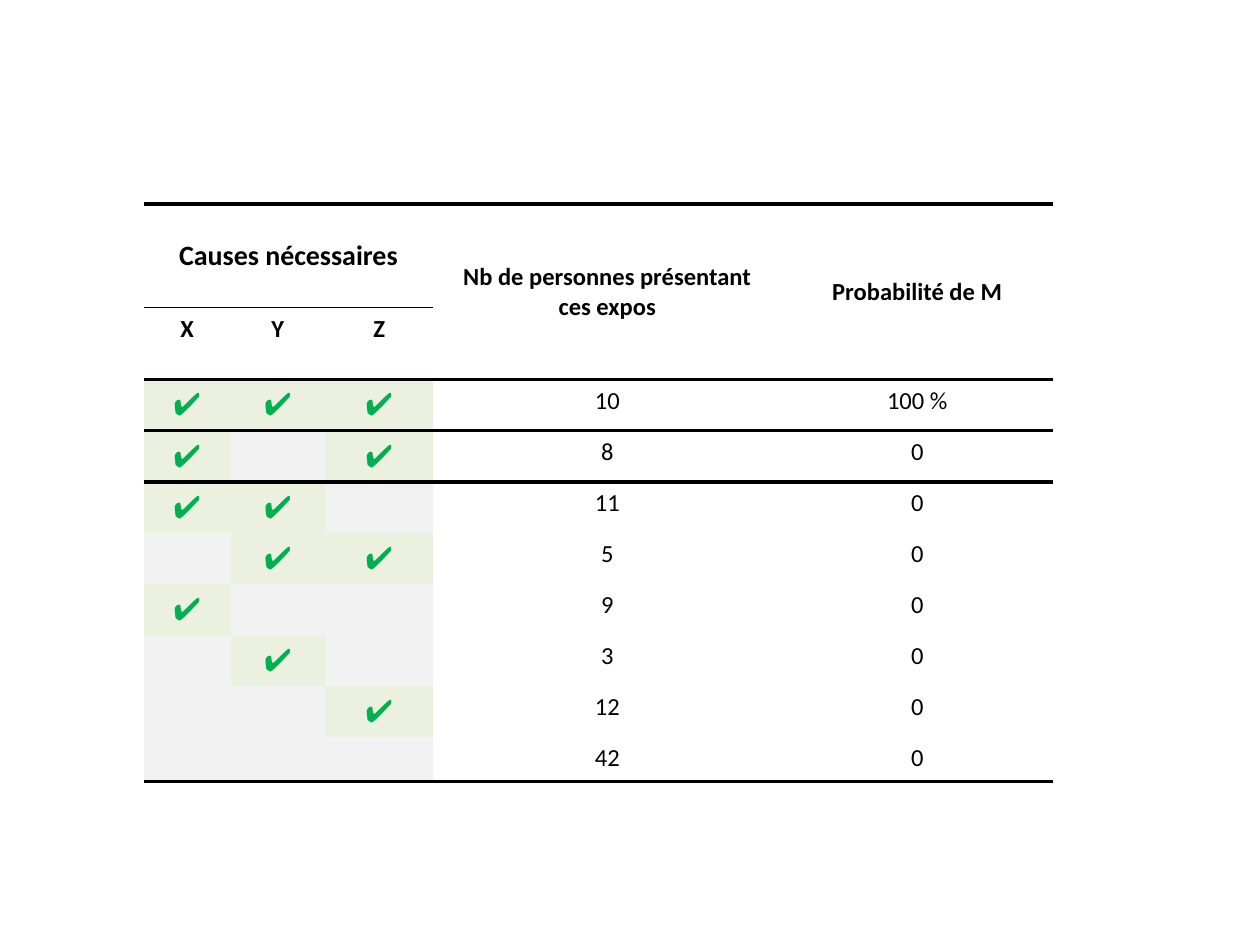
import pptx
import pptx.util
import pptx.dml.color
import pptx.enum.text
import pptx.oxml.ns
from lxml import etree

BLACK = pptx.dml.color.RGBColor(0x00, 0x00, 0x00)
GREEN = pptx.dml.color.RGBColor(0x00, 0xB0, 0x50)
PALE_GREEN = pptx.dml.color.RGBColor(0xEB, 0xF1, 0xDE)
GREY = pptx.dml.color.RGBColor(0xF2, 0xF2, 0xF2)

FONT = "Calibri"
NO_GRID_STYLE = "{2D5ABB26-0587-4C30-8999-92F81FD0307C}"
CAUSES = "XYZ"
COLUMNS = [0.69, 0.75, 0.86, 2.76, 2.16]
HEADER_ROWS = [0.82, 0.57]
ROW_HEIGHT = 0.35
CASES = [
    ("XYZ", "10", "100 %"),
    ("XZ", "8", "0"),
    ("XY", "11", "0"),
    ("YZ", "5", "0"),
    ("X", "9", "0"),
    ("Y", "3", "0"),
    ("Z", "12", "0"),
    ("", "42", "0"),
]


def add_grid(s, left, top, columns, rows):
    """Add an unstyled table with the given column widths and row heights."""
    size = [pptx.util.Inches(v) for v in (left, top, sum(columns), sum(rows))]
    table = s.shapes.add_table(len(rows), len(columns), *size).table
    table.first_row = table.horz_banding = False
    style = table._tbl.tblPr.find(pptx.oxml.ns.qn("a:tableStyleId"))
    style.text = NO_GRID_STYLE
    for column, width in zip(table.columns, columns):
        column.width = pptx.util.Inches(width)
    for row, height in zip(table.rows, rows):
        row.height = pptx.util.Inches(height)
    return table


def add_border(cell, side, width):
    """Draw a black border on one side of a cell."""
    qn = pptx.oxml.ns.qn
    tcPr = cell._tc.get_or_add_tcPr()
    ln = etree.SubElement(tcPr, qn("a:" + side), w=str(pptx.util.Pt(width)))
    fill = etree.SubElement(ln, qn("a:solidFill"))
    etree.SubElement(fill, qn("a:srgbClr"), val=str(BLACK))


def add_rule(table, edge, columns, width=2.25):
    """Draw a horizontal rule above the row numbered edge."""
    for c in columns:
        if edge > 0:
            add_border(table.cell(edge - 1, c), "lnB", width)
        if edge < len(table.rows):
            add_border(table.cell(edge, c), "lnT", width)


def write(cell, text, size=14, bold=False, color=BLACK, middle=False):
    """Put centred text in a cell."""
    anchor = pptx.enum.text.MSO_ANCHOR
    cell.vertical_anchor = anchor.MIDDLE if middle else anchor.TOP
    p = cell.text_frame.paragraphs[0]
    p.text = text
    p.alignment = pptx.enum.text.PP_ALIGN.CENTER
    for r in p.runs:
        r.font.name = FONT
        r.font.size = pptx.util.Pt(size)
        r.font.bold = bold
        r.font.color.rgb = color


def shade(cell, color):
    """Fill a cell with a plain colour."""
    cell.fill.solid()
    cell.fill.fore_color.rgb = color


def write_header(table):
    """Merge and fill the two header rows."""
    table.cell(0, 0).merge(table.cell(0, 2))
    write(table.cell(0, 0), "Causes nécessaires", 16, True, middle=True)
    titles = ["Nb de personnes présentant ces expos", "Probabilité de M"]
    for c, title in enumerate(titles, len(CAUSES)):
        table.cell(0, c).merge(table.cell(1, c))
        write(table.cell(0, c), title, bold=True, middle=True)
    for c, cause in enumerate(CAUSES):
        write(table.cell(1, c), cause, bold=True)


def write_case(table, row, present, count, probability):
    """Fill one row with its causes, number of people and probability."""
    for c, cause in enumerate(CAUSES):
        cell = table.cell(row, c)
        if cause in present:
            write(cell, "✔", 18, color=GREEN)
            shade(cell, PALE_GREEN)
        else:
            p = cell.text_frame.paragraphs[0]
            etree.SubElement(p._p, pptx.oxml.ns.qn("a:endParaRPr"), sz="1400")
            shade(cell, GREY)
    for c, value in enumerate((count, probability), len(CAUSES)):
        write(table.cell(row, c), value)


def main():
    """Build the slide and save it."""
    prs = pptx.Presentation()
    prs.slide_width = pptx.util.Inches(10)
    prs.slide_height = pptx.util.Inches(7.5)
    s = prs.slides.add_slide(prs.slide_layouts[6])
    rows = HEADER_ROWS + [ROW_HEIGHT] * len(CASES)
    table = add_grid(s, 1.14, 1.62, COLUMNS, rows)
    every = range(len(COLUMNS))
    add_rule(table, 0, every)
    add_rule(table, 1, range(len(CAUSES)), 1)
    for edge in (2, 3, len(rows)):
        add_rule(table, edge, every)
    write_header(table)
    for row, case in enumerate(CASES, len(HEADER_ROWS)):
        write_case(table, row, *case)
    prs.save("out.pptx")


if __name__ == "__main__":
    main()
